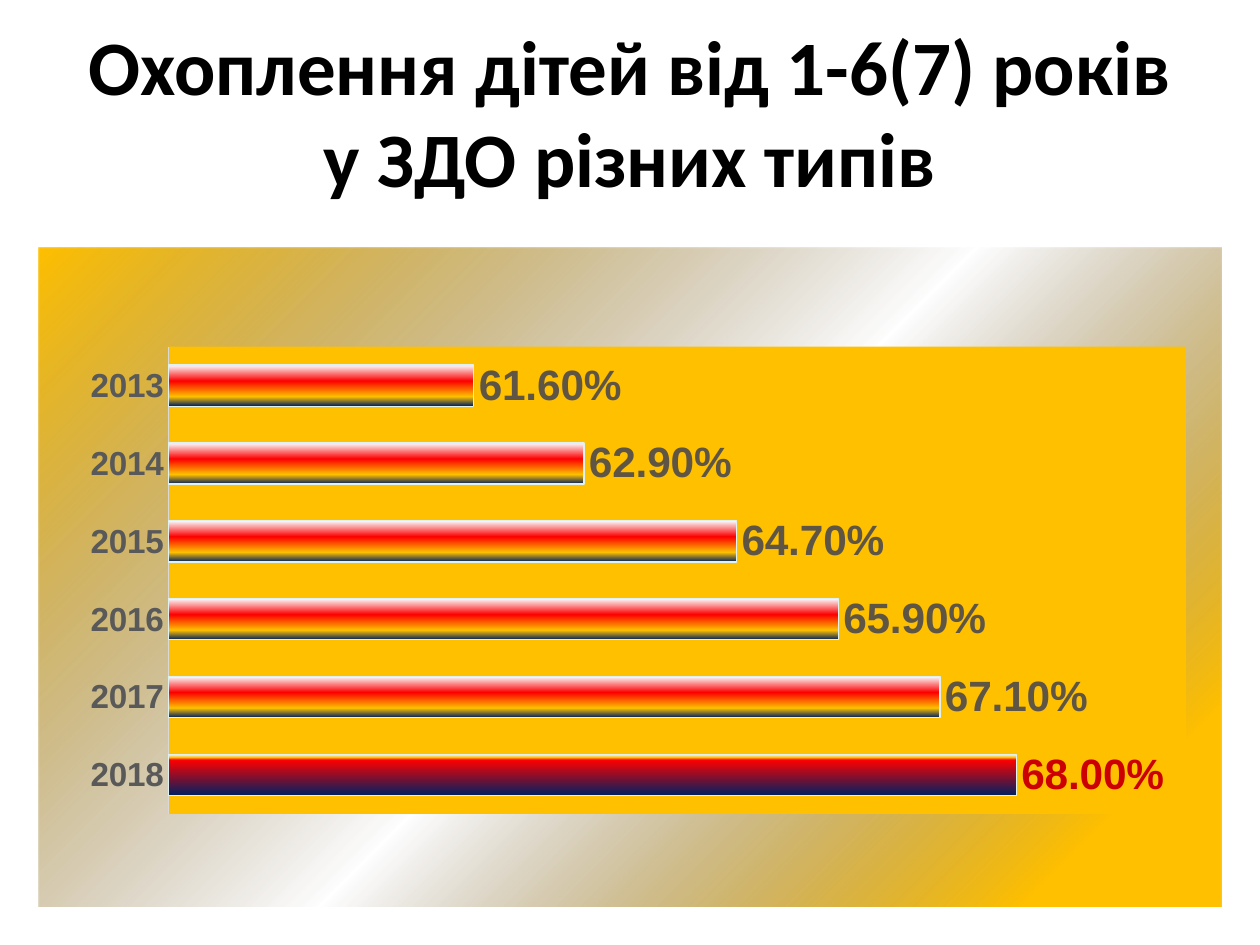
from dataclasses import dataclass

from lxml import etree
from pptx import Presentation
from pptx.chart.data import CategoryChartData
from pptx.dml.color import RGBColor
from pptx.enum import chart as ce
from pptx.enum import text
from pptx.oxml import parse_xml
from pptx.oxml.ns import nsdecls, qn
from pptx.util import Pt

BLACK = RGBColor(0x00, 0x00, 0x00)
GREY = RGBColor(0x59, 0x59, 0x59)
BROWN = RGBColor(0x5E, 0x55, 0x44)
DARK_BROWN = RGBColor(0x41, 0x2B, 0x04)
RED = RGBColor(0xFC, 0x00, 0x00)
LABEL_RED = RGBColor(0xCC, 0x00, 0x00)
GOLD = RGBColor(0xFF, 0xC0, 0x00)
NAVY = RGBColor(0x00, 0x20, 0x60)
PALE = RGBColor(0xFC, 0xFD, 0xFE)
AXIS_LINE = RGBColor(0xD9, 0xD9, 0xD9)
BAR_LINE = RGBColor(0xE0, 0xF1, 0xF2)


@dataclass
class Stop:
    pos: int
    color: RGBColor
    alpha: int = 100


VERTICAL = '<a:lin ang="5400000" scaled="0"/>'
FROM_CORNER = '<a:path path="circle"><a:fillToRect l="100000" t="100000"/></a:path>'
BAR_STOPS = [Stop(0, PALE), Stop(39, RED), Stop(77, GOLD), Stop(100, NAVY)]
LATEST_STOPS = [Stop(0, PALE), Stop(8, GOLD), Stop(14, RED), Stop(100, NAVY)]
BACK_STOPS = [Stop(11, GOLD), Stop(49, DARK_BROWN, 0), Stop(100, GOLD)]

COVERAGE = {"2018": 0.68, "2017": 0.671, "2016": 0.659,
            "2015": 0.647, "2014": 0.629, "2013": 0.616}
PLOT_LAYOUT = {"x": 0.11, "y": 0.15, "w": 0.86, "h": 0.71}


def gradient(stops: list[Stop], direction: str) -> etree._Element:
    gs = "".join(
        f'<a:gs pos="{s.pos * 1000}"><a:srgbClr val="{s.color}">'
        f'<a:alpha val="{s.alpha * 1000}"/></a:srgbClr></a:gs>'
        for s in stops)
    return parse_xml(f'<a:gradFill {nsdecls("a")} rotWithShape="1">'
                     f'<a:gsLst>{gs}</a:gsLst>{direction}</a:gradFill>')


def set_font(font, size: float, color: RGBColor, bold: bool = False,
             name: str = "Arial") -> None:
    font.name, font.size, font.bold = name, Pt(size), bold
    font.color.rgb = color


def add_title(s) -> None:
    sp = s.shapes.title
    sp.left, sp.top, sp.width, sp.height = Pt(36), Pt(12.24), Pt(648), Pt(102.24)
    tf = sp.text_frame
    tf.word_wrap = True
    tf.vertical_anchor = text.MSO_ANCHOR.MIDDLE
    p = tf.paragraphs[0]
    p.alignment = text.PP_ALIGN.CENTER
    r = p.add_run()
    r.text = "Охоплення дітей від 1-6(7) років у ЗДО різних типів"
    set_font(r.font, 44, BLACK, True, "Calibri")


def style_axes(chart) -> None:
    cat, val = chart.category_axis, chart.value_axis
    for axis in (cat, val):
        axis.major_tick_mark = axis.minor_tick_mark = ce.XL_TICK_MARK.NONE
        axis.has_major_gridlines = False
    set_font(cat.tick_labels.font, 19, GREY, True)
    cat.format.line.color.rgb = AXIS_LINE
    cat.format.line.width = Pt(0.75)
    val.minimum_scale, val.maximum_scale = 0.58, 0.7
    val.tick_label_position = ce.XL_TICK_LABEL_POSITION.NONE
    val.format.line.fill.background()


def style_bars(plot) -> None:
    plot.gap_width = 89
    plot.vary_by_categories = False
    series = plot.series[0]
    latest = series.points[0]
    for part in (series, latest):
        part.format.line.color.rgb = BAR_LINE
        part.format.line.width = Pt(0.75)
    ser = series._element
    for where, stops in (("c:spPr", BAR_STOPS), ("c:dPt/c:spPr", LATEST_STOPS)):
        ser.xpath(where)[0].insert(0, gradient(stops, VERTICAL))

    labels = series.data_labels
    labels.show_value = True
    labels.number_format, labels.number_format_is_linked = "0.00%", False
    labels.position = ce.XL_LABEL_POSITION.OUTSIDE_END
    set_font(labels.font, 24.2, BROWN, True)
    set_font(latest.data_label.font, 24.2, LABEL_RED, True)
    latest.data_label.position = ce.XL_LABEL_POSITION.OUTSIDE_END


def style_areas(chart) -> None:
    """Fill the chart and plot backgrounds and place the inner plot area."""
    space = chart._chartSpace
    back = parse_xml(f'<c:spPr {nsdecls("c", "a")}><a:ln><a:noFill/></a:ln></c:spPr>')
    back.insert(0, gradient(BACK_STOPS, FROM_CORNER))
    space.find(qn("c:chart")).addnext(back)

    area = space.xpath("c:chart/c:plotArea")[0]
    for old in area.findall(qn("c:layout")):
        area.remove(old)
    modes = '<c:xMode val="edge"/><c:yMode val="edge"/>'
    sizes = "".join(f'<c:{k} val="{v}"/>' for k, v in PLOT_LAYOUT.items())
    area.insert(0, parse_xml(
        f'<c:layout {nsdecls("c")}><c:manualLayout><c:layoutTarget val="inner"/>'
        f'{modes}{sizes}</c:manualLayout></c:layout>'))
    area.append(parse_xml(
        f'<c:spPr {nsdecls("c", "a")}><a:solidFill><a:srgbClr val="{GOLD}"/>'
        f'</a:solidFill><a:ln><a:noFill/></a:ln></c:spPr>'))


def add_coverage_chart(s) -> None:
    data = CategoryChartData(number_format="0.00%")
    data.categories = list(COVERAGE)
    data.add_series("Series 1", list(COVERAGE.values()))
    chart = s.shapes.add_chart(ce.XL_CHART_TYPE.BAR_CLUSTERED, Pt(22), Pt(141.8),
                               Pt(676), Pt(376), data).chart
    chart.has_legend = False
    chart.has_title = False
    set_font(chart.font, 10, BLACK)
    style_axes(chart)
    style_bars(chart.plots[0])
    style_areas(chart)


def main() -> None:
    prs = Presentation()
    prs.slide_width, prs.slide_height = Pt(720), Pt(540)
    s = prs.slides.add_slide(prs.slide_layouts[5])
    add_title(s)
    add_coverage_chart(s)
    prs.save("out.pptx")


if __name__ == "__main__":
    main()
